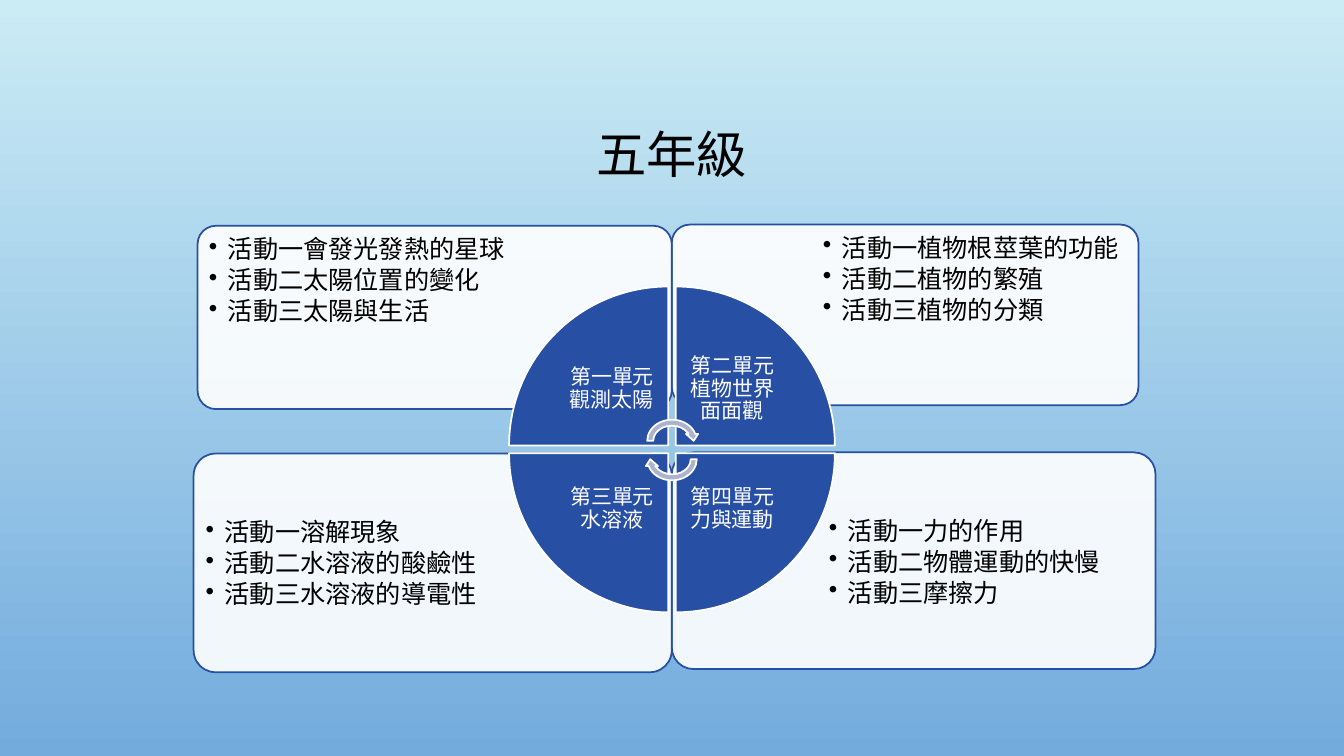
from lxml import etree
from pptx import Presentation
from pptx.dml.color import RGBColor
from pptx.enum.shapes import MSO_SHAPE
from pptx.enum.text import MSO_ANCHOR, PP_ALIGN
from pptx.oxml.ns import qn
from pptx.util import Cm, Pt

ROUNDED, WEDGE = MSO_SHAPE.ROUNDED_RECTANGLE, MSO_SHAPE.PIE_WEDGE
CURVED_ARROW = MSO_SHAPE.CIRCULAR_ARROW
TOP, MIDDLE = MSO_ANCHOR.TOP, MSO_ANCHOR.MIDDLE
LEFT, CENTER = PP_ALIGN.LEFT, PP_ALIGN.CENTER

COLORS = {"sky": "CBECF5", "deep": "73ABDD", "blue": "274FA4",
          "white": "FFFFFF", "black": "000000", "arrow": "ADB3CF"}
FONT = "Calibri"
BULLET_INDENT = 0.48

PANELS = [
    ((16.93, 11.4, 12.19, 5.46), True, True,
     ["活動一力的作用", "活動二物體運動的快慢", "活動三摩擦力"]),
    ((4.88, 11.43, 12.05, 5.51), False, True,
     ["活動一溶解現象", "活動二水溶液的酸鹼性", "活動三水溶液的導電性"]),
    ((16.93, 5.66, 11.76, 4.55), True, False,
     ["活動一植物根莖葉的功能", "活動二植物的繁殖", "活動三植物的分類"]),
    ((4.98, 5.69, 11.95, 4.62), False, False,
     ["活動一會發光發熱的星球", "活動二太陽位置的變化", "活動三太陽與生活"]),
]
UNITS = [(0, 0, "第一單元觀測太陽"), (1, 0, "第二單元植物世界面面觀"),
         (1, 1, "第四單元力與運動"), (0, 1, "第三單元水溶液")]


def color(name):
    """Return the named colour."""
    return RGBColor.from_string(COLORS[name])


def add_bullet(paragraph):
    """Give a paragraph a hanging round bullet."""
    properties = paragraph._p.get_or_add_pPr()
    properties.set("marL", str(Cm(BULLET_INDENT)))
    properties.set("indent", str(-Cm(BULLET_INDENT)))
    etree.SubElement(properties, qn("a:buChar")).set("char", "•")


def add_text(slide, box, lines, size, fill="black", align=LEFT, anchor=TOP,
             inset=0.18, bullets=False, space_after=0):
    """Add a text box with one paragraph for each line."""
    shape = slide.shapes.add_textbox(*map(Cm, box))
    frame = shape.text_frame
    frame.word_wrap = True
    frame.vertical_anchor = anchor
    frame.margin_left = frame.margin_right = Cm(inset)
    frame.margin_top = frame.margin_bottom = Cm(inset)
    for index, line in enumerate(lines):
        paragraph = frame.add_paragraph() if index else frame.paragraphs[0]
        if bullets:
            paragraph.level = 1
            add_bullet(paragraph)
        paragraph.alignment = align
        paragraph.line_spacing = 0.9
        paragraph.space_after = Pt(space_after)
        run = paragraph.add_run()
        run.text = line
        run.font.name = FONT
        run.font.size = Pt(size)
        run.font.color.rgb = color(fill)


def add_figure(slide, kind, box, fill, line, rotation=0):
    """Add a filled and outlined preset shape."""
    shape = slide.shapes.add_shape(kind, *map(Cm, box))
    shape.shadow.inherit = False
    shape.fill.solid()
    shape.fill.fore_color.rgb = color(fill)
    shape.line.color.rgb = color(line)
    shape.line.width = Pt(1.25)
    shape.rotation = rotation
    return shape


def add_panel(slide, box, on_right, on_bottom, activities):
    """Add a translucent panel with its activities in the outer corner."""
    left, top, width, height = box
    panel = add_figure(slide, ROUNDED, box, "white", "blue")
    panel.adjustments[0] = 0.1
    solid = panel.fill._xPr.find(qn("a:solidFill"))
    etree.SubElement(solid[0], qn("a:alpha")).set("val", "90000")
    margin = 0.022 * height
    text_left = left + margin + on_right * 0.3 * width
    text_top = top + margin + on_bottom * 0.25 * height
    text_box = (text_left, text_top,
                0.7 * width - 2 * margin, 0.75 * height - 2 * margin)
    add_text(slide, text_box, activities, 18, bullets=True, space_after=2.7)


def add_wheel(slide, left, top, size, pitch):
    """Add the four unit wedges and the two arrows at their centre."""
    label = 0.707 * size
    for turn, (column, row, unit) in enumerate(UNITS):
        x, y = left + column * pitch, top + row * pitch
        add_figure(slide, WEDGE, (x, y, size, size), "blue", "white", turn * 90)
        label_box = (x + (1 - column) * (size - label),
                     y + (1 - row) * (size - label), label, label)
        add_text(slide, label_box, [unit], 15, fill="white", align=CENTER,
                 anchor=MIDDLE, inset=0.29)
    center = left + (pitch + size) / 2
    for offset, rotation in ((3.28, 0), (3.74, 180)):
        add_figure(slide, CURVED_ARROW, (center - 0.7, top + offset, 1.4, 1.22),
                   "arrow", "white", rotation)


def add_background(slide):
    """Fill the slide with a vertical gradient."""
    fill = slide.background.fill
    fill.gradient()
    fill.gradient_angle = 270
    for stop, name, position in zip(fill.gradient_stops, ("sky", "deep"), (0, 1)):
        stop.color.rgb = color(name)
        stop.position = position


def main():
    """Build and save the slide."""
    presentation = Presentation()
    presentation.slide_width, presentation.slide_height = Cm(33.87), Cm(19.05)
    slide = presentation.slides.add_slide(presentation.slide_layouts[6])
    add_background(slide)
    add_text(slide, (2.54, 1.73, 28.78, 4.45), ["五年級"], 36,
             align=CENTER, anchor=MIDDLE)
    for panel in PANELS:
        add_panel(slide, *panel)
    add_wheel(slide, 12.83, 7.22, 4.01, 4.2)
    presentation.save("out.pptx")


if __name__ == "__main__":
    main()
